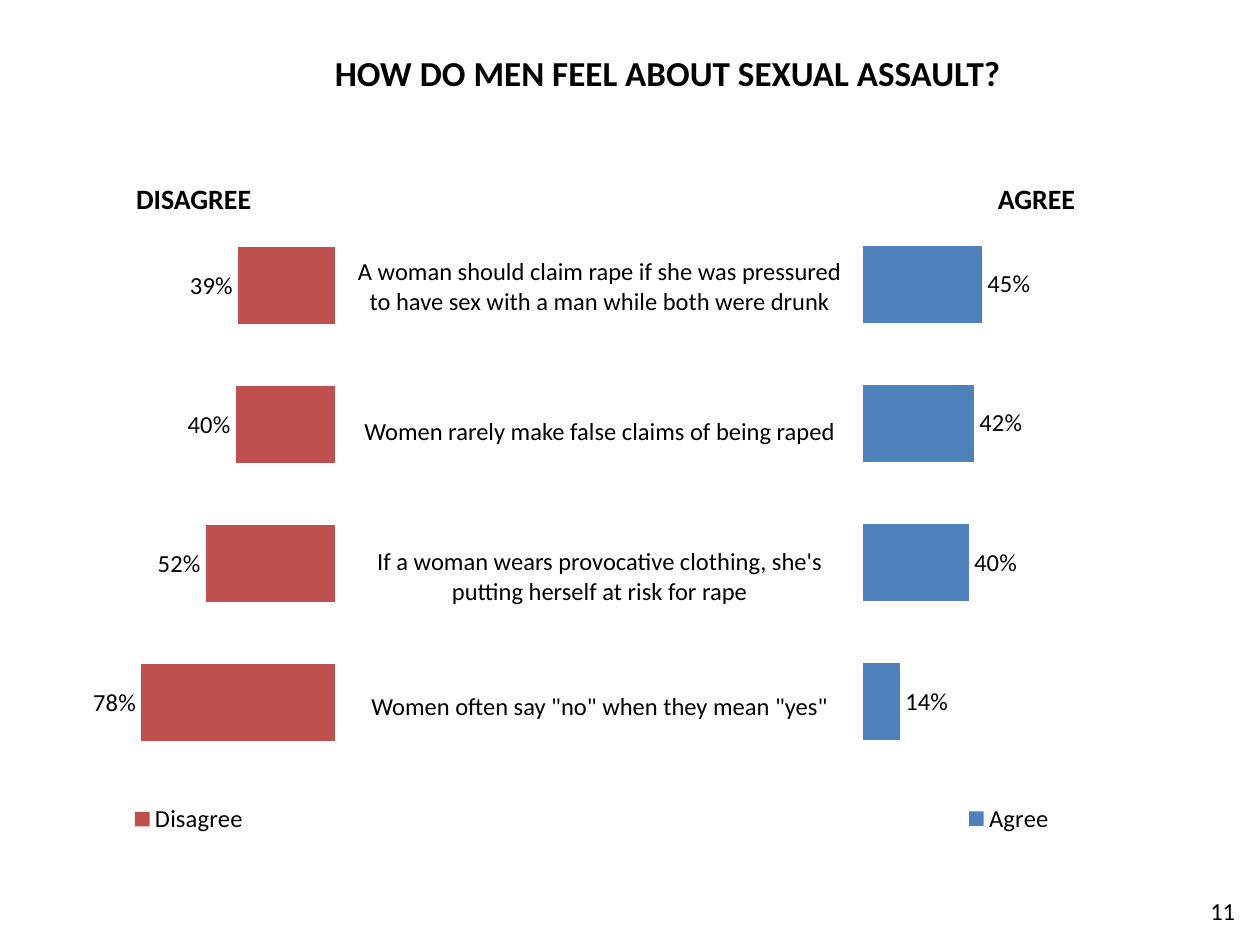
from pptx import Presentation
from pptx.chart.data import CategoryChartData
from pptx.dml.color import RGBColor
from pptx.enum.chart import XL_CHART_TYPE, XL_LABEL_POSITION, XL_LEGEND_POSITION
from pptx.enum.text import MSO_ANCHOR, PP_ALIGN
from pptx.oxml import parse_xml
from pptx.oxml.ns import nsdecls, qn
from pptx.util import Cm, Pt

BAR = XL_CHART_TYPE.BAR_CLUSTERED
OUT_END = XL_LABEL_POSITION.OUTSIDE_END
BOTTOM = XL_LEGEND_POSITION.BOTTOM
CENTER, LEFT = PP_ALIGN.CENTER, PP_ALIGN.LEFT
MIDDLE = MSO_ANCHOR.MIDDLE

FONT = "Calibri"
COLORS = {"text": "000000", "agree": "4F81BD", "disagree": "C0504D"}
STATEMENTS = [
    "A woman should claim rape if she was pressured to have sex with a man while both were drunk",
    "Women rarely make false claims of being raped",
    "If a woman wears provocative clothing, she's putting herself at risk for rape",
    'Women often say "no" when they mean "yes"',
]
ROW_HEIGHTS = [2.62, 3.22, 2.62, 2.62]


def rgb(name):
    return RGBColor.from_string(COLORS[name])


def style_font(font, size, bold=False):
    font.name = FONT
    font.size = Pt(size)
    font.bold = bold
    font.color.rgb = rgb("text")


def add_label(slide, box, text, size, bold=True, align=CENTER):
    tf = slide.shapes.add_textbox(*map(Cm, box)).text_frame
    tf.word_wrap = True
    p = tf.paragraphs[0]
    p.text = text
    p.alignment = align
    style_font(p.font, size, bold)


def set_plot_layout(chart, x, y, w, h):
    area = chart.element.find(".//" + qn("c:plotArea"))
    for old in area.findall(qn("c:layout")):
        area.remove(old)
    area.insert(0, parse_xml(
        f'<c:layout {nsdecls("c")}><c:manualLayout><c:layoutTarget val="inner"/>'
        '<c:xMode val="edge"/><c:yMode val="edge"/>'
        f'<c:x val="{x}"/><c:y val="{y}"/><c:w val="{w}"/><c:h val="{h}"/>'
        '</c:manualLayout></c:layout>'))


def add_bars(slide, box, name, values, color, layout, reverse=False):
    data = CategoryChartData(number_format="0%")
    data.categories = ["1", "2", "3", "4"]
    data.add_series(name, values)
    chart = slide.shapes.add_chart(BAR, *map(Cm, box), data).chart
    style_font(chart.font, 18)
    chart.has_title = False
    chart.has_legend = True
    chart.legend.position = BOTTOM
    chart.legend.include_in_layout = False
    style_font(chart.legend.font, 14)

    axis = chart.value_axis
    axis.minimum_scale, axis.maximum_scale = 0, 1.1
    axis.reverse_order = reverse
    axis.has_major_gridlines = False
    axis.visible = False
    chart.category_axis.visible = False

    plot = chart.plots[0]
    plot.gap_width = 81
    plot.vary_by_categories = False
    fill = plot.series[0].format.fill
    fill.solid()
    fill.fore_color.rgb = rgb(color)
    plot.has_data_labels = True
    labels = plot.data_labels
    labels.show_value = True
    labels.number_format = "0%"
    labels.number_format_is_linked = False
    labels.position = OUT_END
    style_font(labels.font, 14)
    set_plot_layout(chart, *layout)


def add_statements(slide, box):
    table = slide.shapes.add_table(len(STATEMENTS), 1, *map(Cm, box)).table
    table.first_row = False
    table.horz_banding = False
    for row, height, text in zip(table.rows, ROW_HEIGHTS, STATEMENTS):
        row.height = Cm(height)
        cell = row.cells[0]
        cell.fill.background()
        cell.vertical_anchor = MIDDLE
        cell.margin_left = cell.margin_right = cell.margin_top = Cm(0.03)
        cell.margin_bottom = 0
        p = cell.text_frame.paragraphs[0]
        p.text = text
        p.alignment = CENTER
        style_font(p.font, 14)


def main():
    prs = Presentation()
    prs.slide_width, prs.slide_height = Cm(25.4), Cm(19.05)
    slide = prs.slides.add_slide(prs.slide_layouts[6])

    add_bars(slide, (17.04, 4.11, 6.6, 12.8), "Agree", (0.14, 0.4, 0.42, 0.45),
             "agree", (0.055, 0.017, 0.889, 0.877))
    add_bars(slide, (0.71, 4.04, 6.2, 12.88), "Disagree", (0.78, 0.52, 0.4, 0.39),
             "disagree", (0.086, 0.025, 0.889, 0.87), reverse=True)
    add_statements(slide, (7.11, 4.47, 9.96, sum(ROW_HEIGHTS)))
    add_label(slide, (18.29, 3.53, 5.21, 0.94), "AGREE", 16)
    add_label(slide, (1.3, 3.53, 5.21, 0.94), "DISAGREE", 16)
    add_label(slide, (6.5, 0.91, 14, 1.12), "HOW DO MEN FEEL ABOUT SEXUAL ASSAULT?", 20, align=LEFT)
    add_label(slide, (23.9, 17.93, 1.5, 1.12), "11", 14, bold=False)

    prs.save("out.pptx")


if __name__ == "__main__":
    main()
